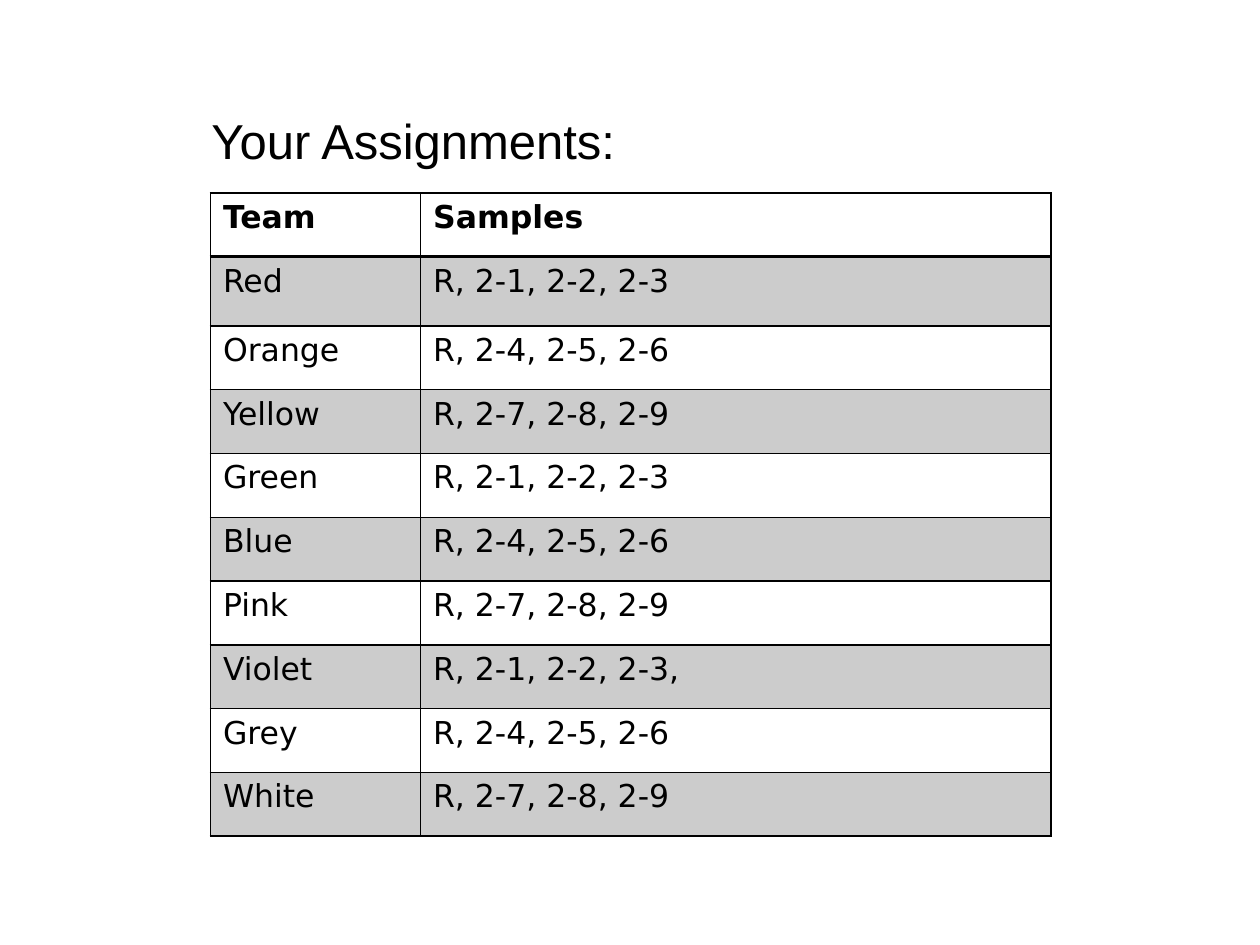
from lxml import etree
from pptx import Presentation
from pptx import util as u
from pptx.dml.color import RGBColor
from pptx.enum import text
from pptx.oxml import ns

COLORS = {"ink": "000000"}
BAND_OPACITY = 20
HEADER = ("Team", "Samples")
ASSIGNMENTS = [
    ("Red", "R, 2-1, 2-2, 2-3"),
    ("Orange", "R, 2-4, 2-5, 2-6"),
    ("Yellow", "R, 2-7, 2-8, 2-9"),
    ("Green", "R, 2-1, 2-2, 2-3"),
    ("Blue", "R, 2-4, 2-5, 2-6"),
    ("Pink", "R, 2-7, 2-8, 2-9"),
    ("Violet", "R, 2-1, 2-2, 2-3,"),
    ("Grey", "R, 2-4, 2-5, 2-6"),
    ("White", "R, 2-7, 2-8, 2-9"),
]


def write(frame, wording, font_name, size, bold=False):
    frame.text = wording
    font = frame.paragraphs[0].font
    font.name, font.size, font.bold = font_name, u.Pt(size), bold
    font.color.rgb = RGBColor.from_string(COLORS["ink"])


def set_borders(cell, top, bottom):
    """Draw all four edges; top and bottom are widths in points."""
    properties = cell._tc.get_or_add_tcPr()
    edges = {"lnL": 1, "lnR": 1, "lnT": top, "lnB": bottom}
    for position, (edge, width) in enumerate(edges.items()):
        line = etree.Element(ns.qn(f"a:{edge}"), w=str(u.Pt(width)))
        fill = etree.SubElement(line, ns.qn("a:solidFill"))
        etree.SubElement(fill, ns.qn("a:srgbClr"), val=COLORS["ink"])
        properties.insert(position, line)


def shade(cell):
    """Fill the cell with translucent ink."""
    cell.fill.solid()
    cell.fill.fore_color.rgb = RGBColor.from_string(COLORS["ink"])
    color = cell._tc.tcPr.find(f"{ns.qn('a:solidFill')}/{ns.qn('a:srgbClr')}")
    etree.SubElement(color, ns.qn("a:alpha"), val=str(BAND_OPACITY * 1000))


def add_heading(slide, left, top, width, height):
    frame = slide.shapes.add_textbox(left, top, width, height).text_frame
    frame.word_wrap = True
    frame.auto_size = text.MSO_AUTO_SIZE.SHAPE_TO_FIT_TEXT
    write(frame, "Your Assignments:", "Arial", 28)


def add_assignments(slide, left, top, width, height):
    rows = [HEADER, *ASSIGNMENTS]
    table = slide.shapes.add_table(len(rows), len(HEADER), left, top, width, height).table
    table.first_row = table.horz_banding = False
    table.columns[0].width = width // 4
    table.columns[1].width = width - width // 4
    first_team_height = u.Inches(0.55)
    for index, wordings in enumerate(rows):
        table.rows[index].height = (
            first_team_height if index == 1
            else (height - first_team_height) // (len(rows) - 1)
        )
        for column, wording in enumerate(wordings):
            cell = table.cell(index, column)
            write(cell.text_frame, wording, "DejaVu Sans", 18, bold=index == 0)
            if index % 2:
                shade(cell)
            else:
                cell.fill.background()
            set_borders(cell, top=2 if index == 1 else 1, bottom=2 if index == 0 else 1)


def main():
    deck = Presentation()
    deck.slide_width, deck.slide_height = u.Inches(10), u.Inches(7.5)
    slide = deck.slides.add_slide(deck.slide_layouts[6])
    add_heading(slide, u.Inches(1.58), u.Inches(0.83), u.Inches(6.92), u.Inches(0.57))
    add_assignments(slide, u.Inches(1.67), u.Inches(1.53), u.Inches(6.67), u.Inches(5.11))
    deck.save("out.pptx")


if __name__ == "__main__":
    main()
